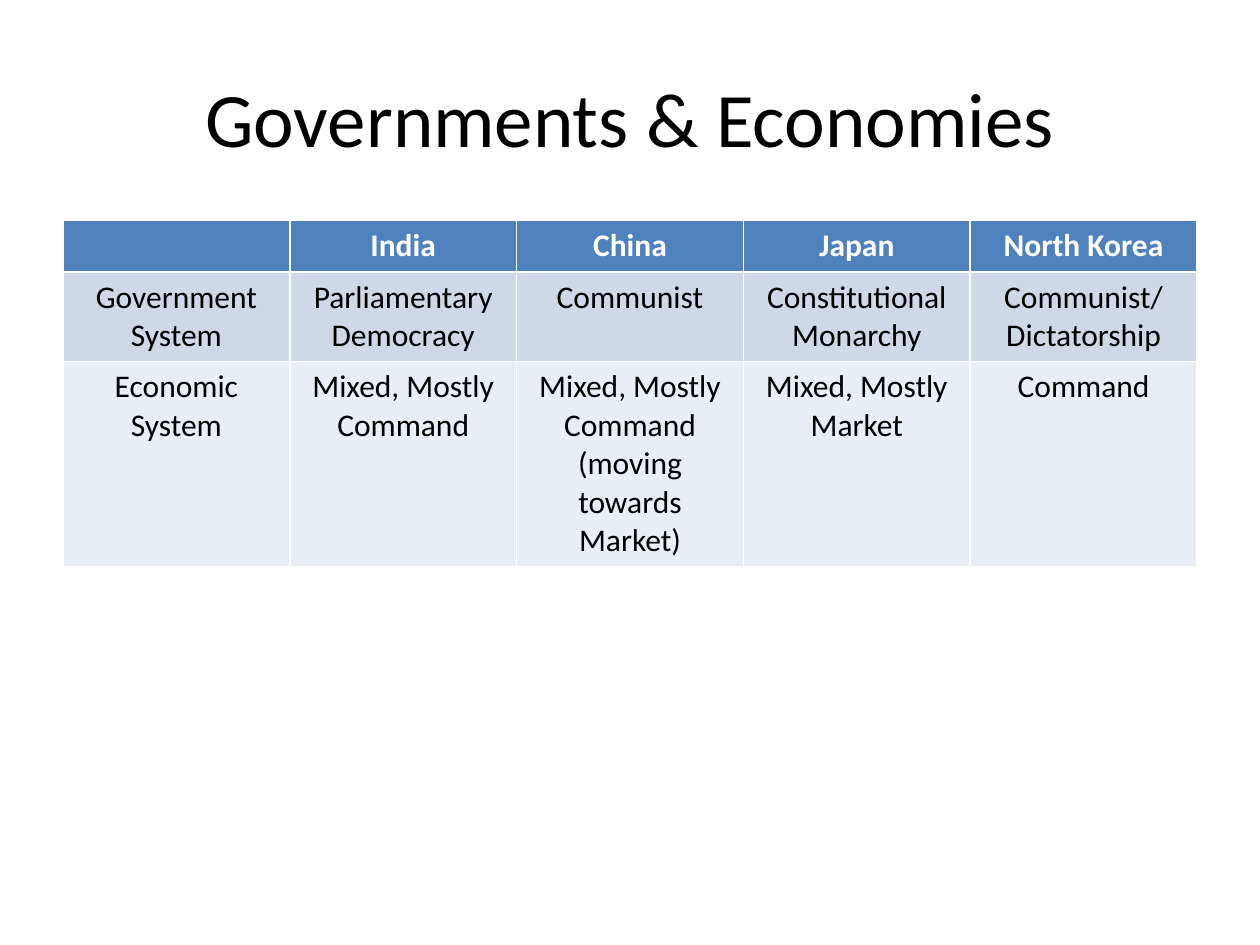
"""Build a slide comparing the governments and economies of four Asian countries."""
from pptx import Presentation
from pptx.dml.color import RGBColor as RGB
from pptx.enum.text import MSO_ANCHOR as ANCHOR, PP_ALIGN as ALIGN
from pptx.util import Inches, Pt

BLACK = RGB(0x00, 0x00, 0x00)
WHITE = RGB(0xFF, 0xFF, 0xFF)
BLUE = RGB(0x4F, 0x81, 0xBD)
LIGHT_BLUE = RGB(0xD0, 0xD8, 0xE8)
PALE_BLUE = RGB(0xE9, 0xED, 0xF4)
FONT = "Calibri"


def format_text(paragraph, size, color, bold=False):
    paragraph.alignment = ALIGN.CENTER
    for run in paragraph.runs:
        run.font.name = FONT
        run.font.size = Pt(size)
        run.font.bold = bold
        run.font.color.rgb = color


rows = [
    (0.41, BLUE, WHITE, ["", "India", "China", "Japan", "North Korea"]),
    (0.7, LIGHT_BLUE, BLACK, [
        "Government System", "Parliamentary Democracy", "Communist",
        "Constitutional Monarchy", "Communist/ Dictatorship"]),
    (1.6, PALE_BLUE, BLACK, [
        "Economic System", "Mixed, Mostly Command",
        "Mixed, Mostly Command (moving towards Market)",
        "Mixed, Mostly Market", "Command"]),
]

presentation = Presentation()
presentation.slide_width = Inches(10)
presentation.slide_height = Inches(7.5)
slide = presentation.slides.add_slide(presentation.slide_layouts[5])

title = slide.shapes.title
title.left, title.top = Inches(0.5), Inches(0.3)
title.width, title.height = Inches(9), Inches(1.25)
title.text_frame.text = "Governments & Economies"
title.text_frame.vertical_anchor = ANCHOR.MIDDLE
format_text(title.text_frame.paragraphs[0], 44, BLACK)

comparison = slide.shapes.add_table(
    len(rows), 5, Inches(0.5), Inches(1.75), Inches(9), Inches(2.71)).table
for row, (height, fill, color, entries) in zip(comparison.rows, rows):
    row.height = Inches(height)
    for cell, entry in zip(row.cells, entries):
        cell.fill.solid()
        cell.fill.fore_color.rgb = fill
        cell.text_frame.text = entry
        format_text(cell.text_frame.paragraphs[0], 18, color, bold=fill == BLUE)

presentation.save("out.pptx")
